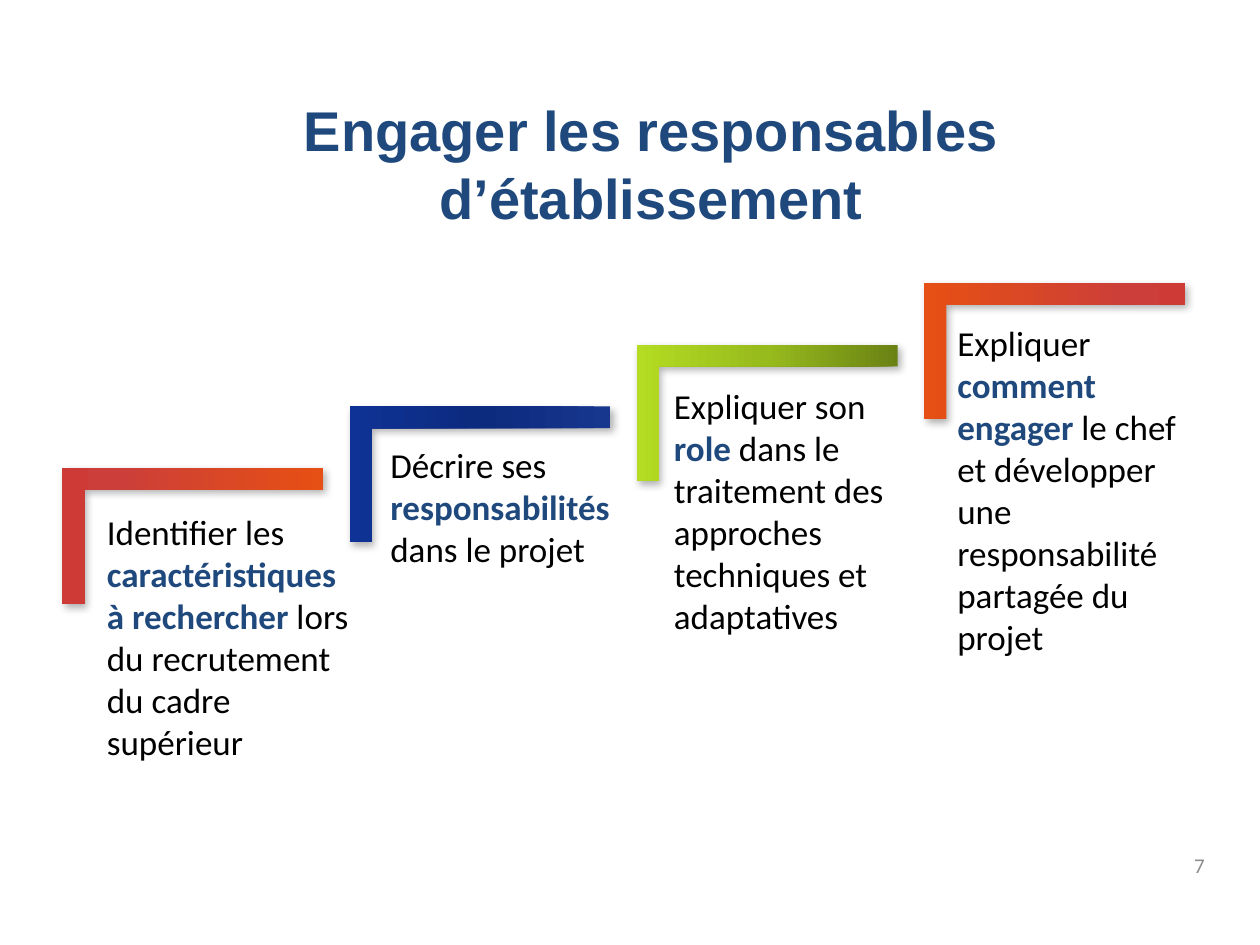
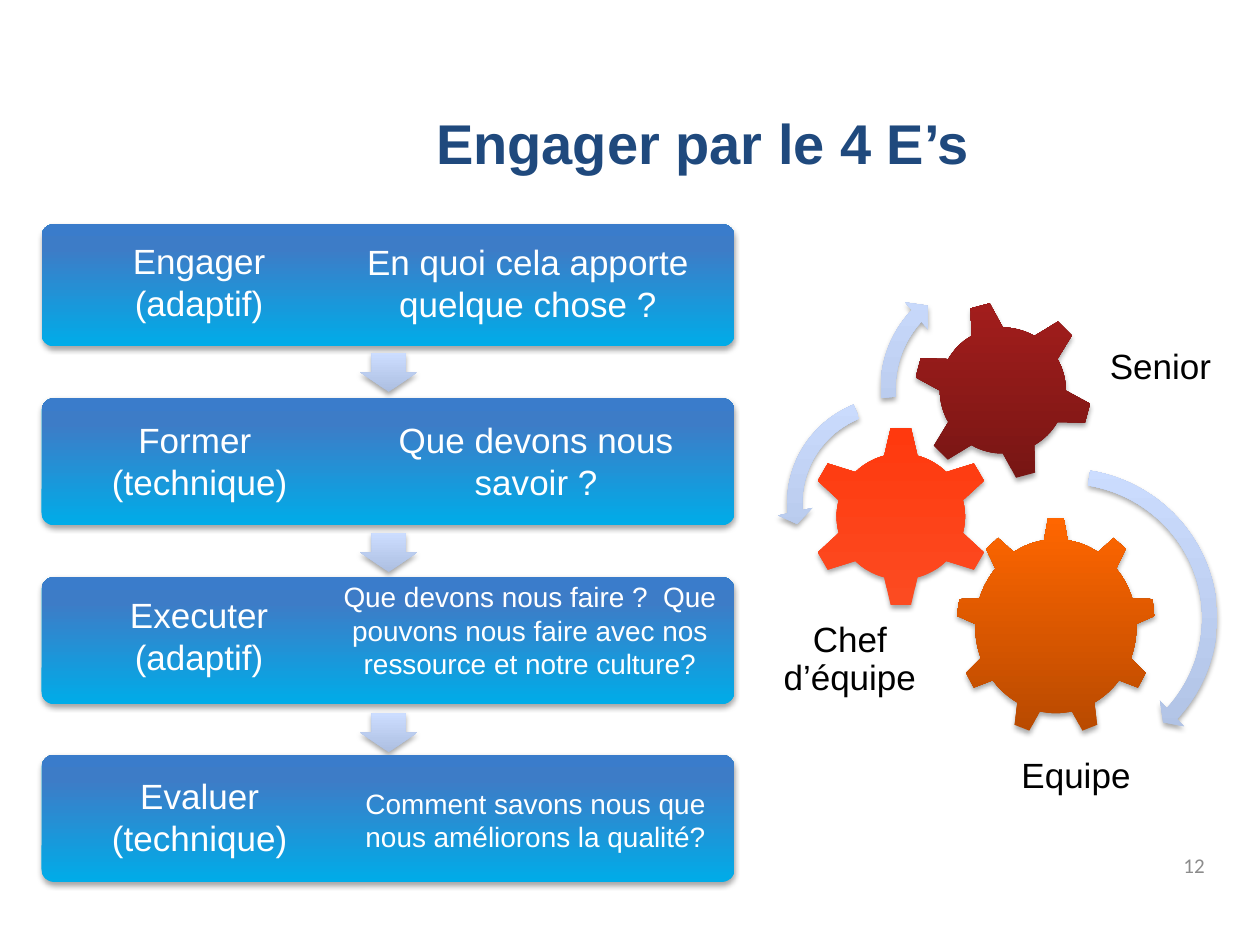
from math import cos, radians, sin

from lxml import etree
from pptx import Presentation
from pptx.dml.color import RGBColor
from pptx.enum.shapes import MSO_SHAPE
from pptx.enum.text import MSO_ANCHOR, MSO_AUTO_SIZE, PP_ALIGN
from pptx.oxml.ns import qn
from pptx.util import Inches, Pt

LEFT, CENTER, RIGHT = PP_ALIGN.LEFT, PP_ALIGN.CENTER, PP_ALIGN.RIGHT
TOP, MIDDLE = MSO_ANCHOR.TOP, MSO_ANCHOR.MIDDLE
GROW, FIXED = MSO_AUTO_SIZE.SHAPE_TO_FIT_TEXT, MSO_AUTO_SIZE.NONE
CORNER, BOX = MSO_SHAPE.from_xml("corner"), MSO_SHAPE.ROUNDED_RECTANGLE
ARROW = MSO_SHAPE.RIGHT_ARROW
TURN, TURN_BACK = MSO_SHAPE.CIRCULAR_ARROW, MSO_SHAPE.LEFT_CIRCULAR_ARROW

NAVY = RGBColor(0x1F, 0x49, 0x7D)
BLACK = RGBColor(0, 0, 0)
WHITE = RGBColor(0xFF, 0xFF, 0xFF)
GREY = RGBColor(0x8C, 0x8C, 0x8C)


def stops(**colours):
    """Gradient stops from names such as p80="CB3E3A" (80 percent)."""
    return [(int(name[1:]), RGBColor.from_string(value))
            for name, value in colours.items()]


RED_ORANGE = stops(p0="E65014", p80="CB3E3A", p100="CE3B37")
DEEP_BLUE = stops(p0="17368D", p50="0C2A7E", p100="0E3296")
GREEN = stops(p0="6A8214", p50="97BA1D", p100="B3DC22")
SKY = stops(p0="00ACE8", p80="3D7CC7", p100="3A7CCB")
PALE = stops(p0="ADBFE1", p100="CCDDFF")
ORANGE = stops(p0="B94A00", p100="FF6600")
SCARLET = stops(p0="FC4B21", p100="FF390E")
MAROON = stops(p0="781614", p100="A21D1C")

# Opacity %, blur pt, distance pt, direction in degrees
STEP_SHADOW = (30, 4.5, 2.6, 53)
SOFT_SHADOW = (35, 3.1, 1.8, 90)
UPWARD, LEFTWARD, RIGHTWARD = 90, 180, 0


class Deck:
    def __init__(self):
        self.prs = Presentation()
        self.prs.slide_width, self.prs.slide_height = Inches(10), Inches(7.5)
        self.slide = None

    def new_slide(self, title, title_place, number):
        self.slide = self.prs.slides.add_slide(self.prs.slide_layouts[6])
        self.text(title, title_place, size=32, colour=NAVY, bold=True,
                  anchor=MIDDLE, fit=FIXED)
        self.text(number, (7.33, 6.67, 2.33, 0.4), size=12, font="Calibri",
                  colour=GREY, align=RIGHT, anchor=MIDDLE, fit=FIXED)

    def text(self, content, place, size=20, font="Arial", colour=BLACK, bold=False,
             align=CENTER, anchor=TOP, fit=GROW, spacing=1.0):
        """Add text; a part between asterisks is bold and navy."""
        frame = self.slide.shapes.add_textbox(*map(Inches, place)).text_frame
        for key, value in dict(word_wrap=True, auto_size=fit,
                               vertical_anchor=anchor).items():
            setattr(frame, key, value)
        for i, line in enumerate(content.split("\n")):
            paragraph = frame.add_paragraph() if i else frame.paragraphs[0]
            paragraph.alignment, paragraph.line_spacing = align, spacing
            for j, part in enumerate(line.split("*")):
                strong = j % 2 == 1
                run = paragraph.add_run()
                run.text = part
                run.font.color.rgb = NAVY if strong else colour
                for key, value in dict(size=Pt(size), name=font,
                                       bold=bold or strong).items():
                    setattr(run.font, key, value)

    def finish(self, shape, gradient, direction=UPWARD, shadow=SOFT_SHADOW):
        """Give a shape its gradient and shadow, and no outline."""
        shape.fill.gradient()
        shape.fill.gradient_angle = direction
        grad = shape._element.spPr.find(qn("a:gradFill"))
        grad.set("rotWithShape", "0")
        stop_list = grad.find(qn("a:gsLst"))
        for old in list(stop_list):
            stop_list.remove(old)
        for percent, colour in gradient:
            stop = etree.SubElement(stop_list, qn("a:gs"), pos=str(percent * 1000))
            etree.SubElement(stop, qn("a:srgbClr"), val=str(colour))
        shape.line.fill.background()
        shape.shadow.inherit = False
        opacity, blur, distance, angle = shadow
        effects = shape._element.spPr.find(qn("a:effectLst"))
        outer = etree.SubElement(
            effects, qn("a:outerShdw"), blurRad=str(Pt(blur)), dist=str(Pt(distance)),
            dir=str(angle * 60000), rotWithShape="0")
        black = etree.SubElement(outer, qn("a:srgbClr"), val=str(BLACK))
        etree.SubElement(black, qn("a:alpha"), val=str(opacity * 1000))

    def preset(self, kind, place, adjustments, gradient, rotation=0, **look):
        shape = self.slide.shapes.add_shape(kind, *map(Inches, place))
        shape.rotation = rotation
        for i, value in enumerate(adjustments):
            shape.adjustments[i] = value
        self.finish(shape, gradient, **look)

    def gear(self, centre, body, tip, teeth, first, base_half, tip_half, gradient):
        """Draw a gear; body and tip are (rx, ry), angles are in degrees."""
        def point(radii, angle):
            return tuple(Inches(c + r * f(radians(angle)))
                         for c, r, f in zip(centre, radii, (cos, sin)))

        pitch, arc_steps = 360 / teeth, 8
        outline = []
        for tooth in range(teeth):
            angle = first + tooth * pitch
            outline += [point(tip, angle - tip_half), point(tip, angle + tip_half)]
            valley = pitch - 2 * base_half
            outline += [point(body, angle + base_half + valley * i / arc_steps)
                        for i in range(arc_steps + 1)]
        builder = self.slide.shapes.build_freeform(*outline[0], scale=1.0)
        builder.add_line_segments(outline[1:], close=True)
        self.finish(builder.convert_to_shape(), gradient)


def build_steps(deck):
    deck.new_slide("Engager les responsables d’établissement", (0.67, 0.67, 9, 1.25), "7")
    steps = [
        ("Identifier les *caractéristiques à rechercher *lors du recrutement du cadre "
         "supérieur", (0.75, 4, 2.17, 2.12), RED_ORANGE, LEFTWARD),
        ("Décrire ses *responsabilités *dans le projet",
         (3, 3.47, 2.17, 1.11), DEEP_BLUE, LEFTWARD),
        ("Expliquer son *role *dans le traitement des approches techniques et "
         "adaptatives", (5.25, 3, 1.92, 2.12), GREEN, LEFTWARD),
        ("Expliquer *comment engager *le chef et développer une responsabilité "
         "partagée du projet", (7.5, 2.5, 2, 2.79), RED_ORANGE, RIGHTWARD),
    ]
    for i, (task, place, gradient, direction) in enumerate(steps):
        deck.preset(CORNER, (0.99 + 2.28 * i, 3.22 - 0.49 * i, 1.08, 2.07),
                    (0.161, 0.161), gradient, rotation=90,
                    direction=direction, shadow=STEP_SHADOW)
        deck.text(task, place, font="Calibri", align=LEFT)


def build_four_es(deck):
    deck.new_slide("Engager par le 4 E’s", (0.83, 0.67, 9.5, 0.92), "12")
    phases = [
        (1.78, 0.97, "Engager (adaptif)", (0.79, 1.85, 1.58, 0.77),
         "En quoi cela apporte quelque chose ?", (2.73, 1.86, 2.92, 0.77), 20),
        (3.16, 1.01, "Former \n(technique)", (0.75, 3.27, 1.67, 0.77),
         "Que devons nous savoir ?", (2.67, 3.27, 3.17, 0.77), 20),
        (4.58, 1.01, "Executer (adaptif)", (0.79, 4.66, 1.58, 0.77),
         "Que devons nous faire ?  Que pouvons nous faire avec nos ressource et notre "
         "culture?", (2.58, 4.55, 3.25, 0.91), 16),
        (5.99, 1.01, "Evaluer (technique)", (0.75, 6.1, 1.67, 0.77),
         "Comment savons nous que nous améliorons la qualité?", (2.75, 6.19, 3, 0.64), 16),
    ]
    for i, (top, height, phase, phase_place, question, place, size) in enumerate(phases):
        if i:
            deck.preset(ARROW, (2.93, 2.73 + 1.43 * (i - 1), 0.31, 0.45),
                        (0.6, 0.5), PALE, rotation=90)
        deck.preset(BOX, (0.33, top, 5.5, height), (0.1,), SKY)
        deck.text(phase, phase_place, colour=WHITE)
        deck.text(question, place, size=size, colour=WHITE)

    deck.gear((8.38, 4.97), (0.64, 0.69), (0.79, 0.86), 9, -90, 8.5, 4.5, ORANGE)
    deck.gear((7.15, 4.1), (0.51, 0.5), (0.72, 0.71), 6, -90, 15, 6.4, SCARLET)
    deck.gear((7.96, 3.1), (0.5, 0.5), (0.7, 0.7), 6, -105, 15, 6.4, MAROON)

    turns = [
        (TURN, (7.17, 3.64, 2.57, 2.53), (0.047, 2.99, 25.105, 167.788, 0.055)),
        (TURN_BACK, (6.17, 3.07, 1.86, 1.84), (0.065, 4.3, 104.891, 148.378, 0.075)),
        (TURN, (6.91, 2.09, 2.01, 1.98), (0.06, 4.717, 133.138, 105.082, 0.07)),
    ]
    for kind, place, adjustments in turns:
        deck.preset(kind, place, adjustments, PALE)

    for role, place in [("Senior", (8.42, 2.72, 1.58, 0.4)),
                        ("Equipe", (8, 5.97, 1.08, 0.4)),
                        ("Chef d’équipe", (6.08, 4.89, 1.33, 0.71))]:
        deck.text(role, place, spacing=0.9)


def main():
    deck = Deck()
    build_steps(deck)
    build_four_es(deck)
    deck.prs.save("out.pptx")


if __name__ == "__main__":
    main()
